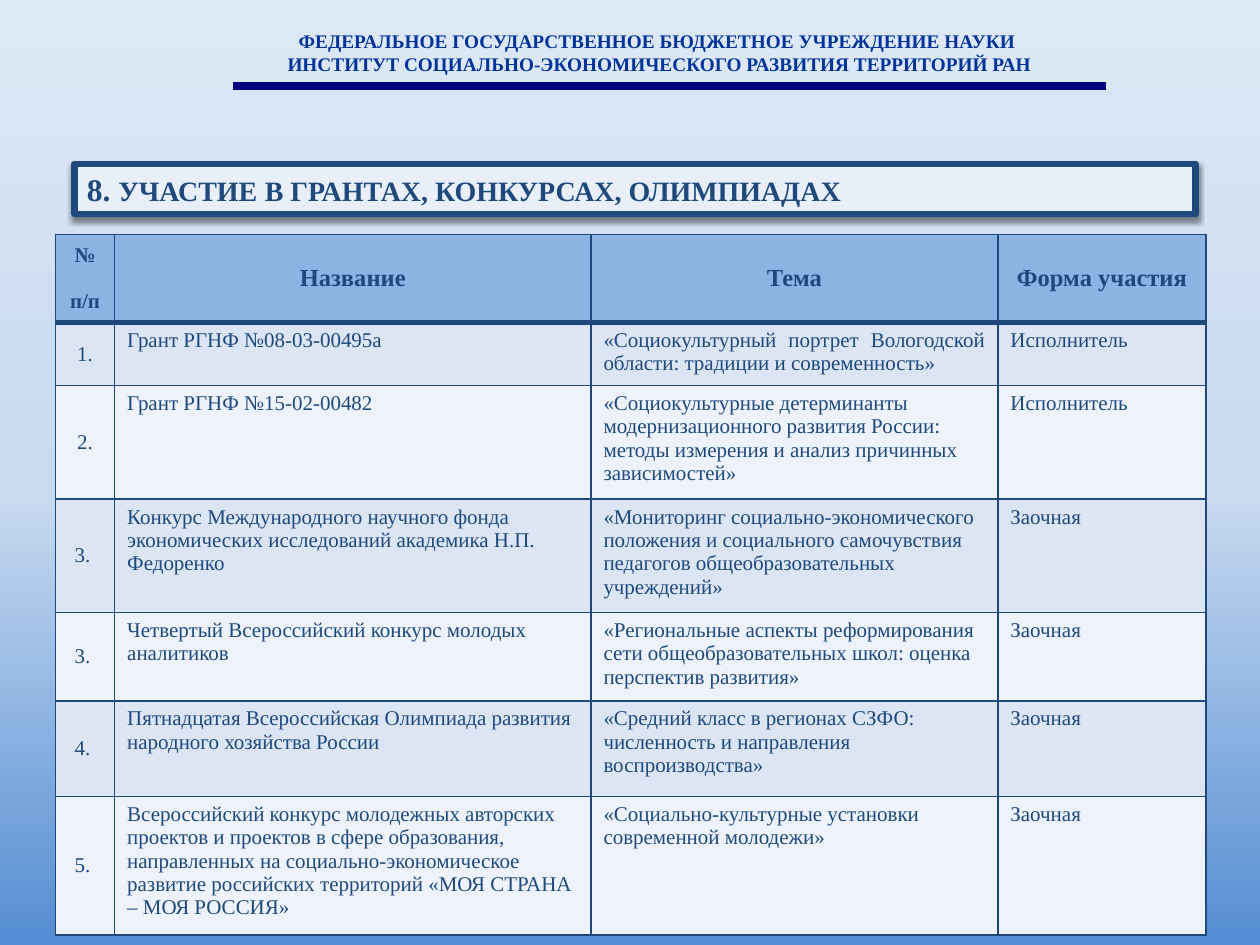
"""Builds a slide listing grants, contests and olympiads in a table."""
from lxml import etree
from pptx import Presentation
from pptx import util as u
from pptx.dml.color import RGBColor
from pptx.enum import shapes, text
from pptx.oxml import parse_xml
from pptx.oxml.ns import nsdecls, qn

COLORS = {
    "navy": "000080", "blue": "003399", "ink": "1F497D", "panel": "E8EFF9",
    "head": "8DB3E2", "odd": "DBE5F4", "even": "EEF2FA", "shadow": "000000",
}
BACKGROUND = [(0, "548DD2"), (48, "C8DAF0"), (100, "DDE8F6")]
FONT = "Times New Roman"
INSTITUTE = [
    "ФЕДЕРАЛЬНОЕ ГОСУДАРСТВЕННОЕ БЮДЖЕТНОЕ УЧРЕЖДЕНИЕ НАУКИ ",
    "ИНСТИТУТ СОЦИАЛЬНО-ЭКОНОМИЧЕСКОГО РАЗВИТИЯ ТЕРРИТОРИЙ РАН",
]
HEADING = [
    ("8. ", 18, FONT, True),
    ("УЧАСТИЕ", 16, FONT, True),
    (" ", 18, "Karla", False),
    ("В ГРАНТАХ, КОНКУРСАХ, ОЛИМПИАДАХ ", 16, FONT, True),
]
ROWS = [
    ("№\n п/п", "Название", "Тема", "Форма участия"),
    ("1.", "Грант РГНФ №08-03-00495а",
     "«Социокультурный портрет Вологодской области: традиции и современность»",
     "Исполнитель"),
    ("2.", "Грант РГНФ №15-02-00482",
     "«Социокультурные детерминанты модернизационного развития России: "
     "методы измерения и анализ причинных зависимостей»", "Исполнитель"),
    ("3. ", "Конкурс Международного научного фонда экономических исследований "
     "академика Н.П. Федоренко",
     "«Мониторинг социально-экономического положения и социального "
     "самочувствия педагогов общеобразовательных учреждений»", "Заочная"),
    ("3. ", "Четвертый Всероссийский конкурс молодых аналитиков",
     "«Региональные аспекты реформирования сети общеобразовательных школ: "
     "оценка перспектив развития»", "Заочная"),
    ("4. ", "Пятнадцатая Всероссийская Олимпиада развития народного хозяйства России",
     "«Средний класс в регионах СЗФО: численность и направления воспроизводства»",
     "Заочная"),
    ("5. ", "Всероссийский конкурс молодежных авторских проектов и проектов в сфере "
     "образования, направленных на социально-экономическое развитие российских "
     "территорий «МОЯ СТРАНА – МОЯ РОССИЯ»",
     "«Социально-культурные установки современной молодежи»", "Заочная"),
]
COLUMN_WIDTHS = [0.47, 3.78, 3.23, 1.65]
ROW_HEIGHTS = [0.7, 0.5, 0.9, 0.9, 0.7, 0.76, 1.1]
JUSTIFIED = (1, 2)


def color(name):
    return RGBColor.from_string(COLORS[name])


def box(*lengths):
    return [u.Inches(length) for length in lengths]


def set_font(font, size, ink, bold, name=FONT):
    font.name, font.size, font.bold = name, u.Pt(size), bold
    font.color.rgb = color(ink)


def paint_background(slide):
    stops = "".join(
        f'<a:gs pos="{position * 1000}"><a:srgbClr val="{shade}"/></a:gs>'
        for position, shade in BACKGROUND)
    slide.background.fill.solid()
    solid = slide.background._cSld.bg.bgPr.find(qn("a:solidFill"))
    solid.getparent().replace(solid, parse_xml(
        f'<a:gradFill {nsdecls("a")} rotWithShape="1"><a:gsLst>{stops}</a:gsLst>'
        '<a:lin ang="16200000" scaled="0"/></a:gradFill>'))


def add_heading(slide):
    heading = slide.shapes.title
    heading.left, heading.top, heading.width, heading.height = box(0.59, 1.3, 8.9, 0.4)
    heading.fill.solid()
    heading.fill.fore_color.rgb = color("panel")
    heading.line.color.rgb = color("ink")
    heading.line.width = u.Pt(3.75)
    heading._element.spPr.append(parse_xml(
        f'<a:effectLst {nsdecls("a")}><a:outerShdw blurRad="{u.Pt(3)}" dist="{u.Pt(2.4)}" '
        f'dir="5400000" rotWithShape="0"><a:srgbClr val="{COLORS["shadow"]}">'
        '<a:alpha val="45000"/></a:srgbClr></a:outerShdw></a:effectLst>'))
    frame = heading.text_frame
    frame.auto_size = text.MSO_AUTO_SIZE.NONE
    frame.vertical_anchor = text.MSO_ANCHOR.MIDDLE
    paragraph = frame.paragraphs[0]
    paragraph.alignment = text.PP_ALIGN.JUSTIFY
    for words, size, name, bold in HEADING:
        run = paragraph.add_run()
        run.text = words
        set_font(run.font, size, "ink", bold, name)


def add_institute(slide):
    rule = slide.shapes.add_connector(
        shapes.MSO_CONNECTOR.STRAIGHT, *box(1.85, 0.68, 8.78, 0.68))
    rule.line.color.rgb = color("navy")
    rule.line.width = u.Pt(4.5)
    etree.SubElement(rule._element.spPr, qn("a:effectLst"))
    frame = slide.shapes.add_textbox(*box(1.14, 0.2, 8.19, 0.45)).text_frame
    frame.word_wrap = True
    frame.vertical_anchor = text.MSO_ANCHOR.BOTTOM
    frame.text = "\n".join(INSTITUTE)
    for paragraph in frame.paragraphs:
        paragraph.alignment = text.PP_ALIGN.CENTER
        set_font(paragraph.font, 11, "blue", True)


def set_borders(cell, bottom):
    properties = cell._tc.get_or_add_tcPr()
    widths = {"lnL": 1, "lnR": 1, "lnT": 1, "lnB": bottom}
    for index, (side, width) in enumerate(widths.items()):
        properties.insert(index, parse_xml(
            f'<a:{side} {nsdecls("a")} w="{u.Pt(width)}"><a:solidFill>'
            f'<a:srgbClr val="{COLORS["ink"]}"/></a:solidFill></a:{side}>'))


def format_cell(cell, row, column):
    header = row == 0
    centered = header or column == 0
    cell.text = ROWS[row][column]
    cell.fill.solid()
    cell.fill.fore_color.rgb = color("head" if header else "odd" if row % 2 else "even")
    cell.vertical_anchor = text.MSO_ANCHOR.MIDDLE if centered else text.MSO_ANCHOR.TOP
    set_borders(cell, 3 if header else 1)
    for paragraph in cell.text_frame.paragraphs:
        paragraph.alignment = (
            text.PP_ALIGN.CENTER if centered
            else text.PP_ALIGN.JUSTIFY if (row, column) == JUSTIFIED
            else text.PP_ALIGN.LEFT)
        set_font(paragraph.font, 14 if header and column else 12, "ink", header)


def add_grants(slide):
    table = slide.shapes.add_table(
        len(ROWS), len(COLUMN_WIDTHS),
        *box(0.44, 1.86, sum(COLUMN_WIDTHS), sum(ROW_HEIGHTS))).table
    for column, width in zip(table.columns, COLUMN_WIDTHS):
        column.width = u.Inches(width)
    for row, height in zip(table.rows, ROW_HEIGHTS):
        row.height = u.Inches(height)
    for row in range(len(ROWS)):
        for column in range(len(COLUMN_WIDTHS)):
            format_cell(table.cell(row, column), row, column)


def main():
    presentation = Presentation()
    presentation.slide_width, presentation.slide_height = box(10, 7.5)
    slide = presentation.slides.add_slide(presentation.slide_layouts[5])
    paint_background(slide)
    add_institute(slide)
    add_heading(slide)
    add_grants(slide)
    presentation.save("out.pptx")


if __name__ == "__main__":
    main()
